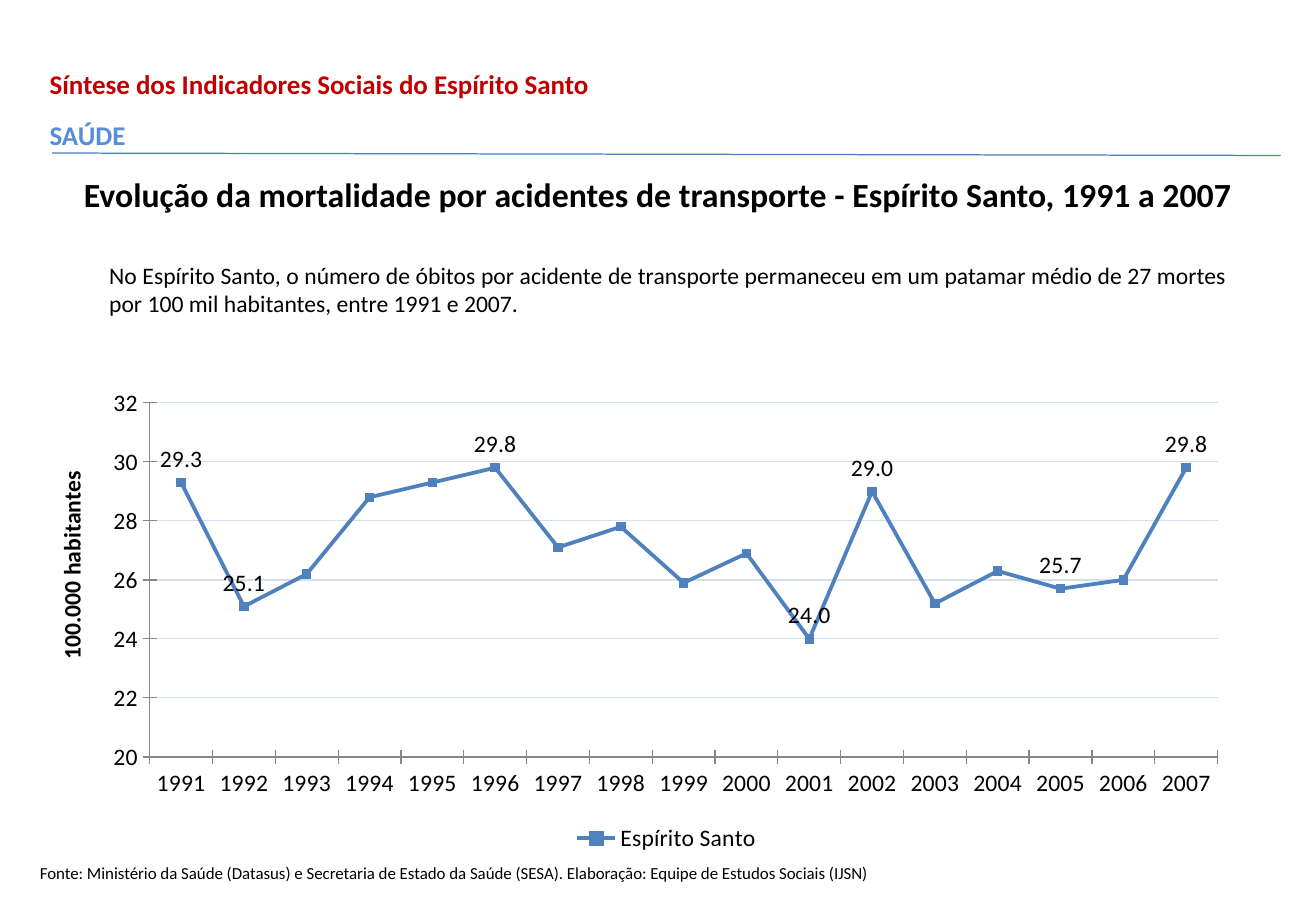
from lxml import etree
from pptx import Presentation
from pptx.chart.data import CategoryChartData
from pptx.dml.color import RGBColor
from pptx.enum.chart import XL_CHART_TYPE, XL_LABEL_POSITION, XL_LEGEND_POSITION
from pptx.enum.chart import XL_MARKER_STYLE, XL_TICK_MARK
from pptx.enum.shapes import MSO_CONNECTOR
from pptx.enum.text import MSO_ANCHOR, PP_ALIGN
from pptx.oxml import parse_xml
from pptx.oxml.ns import nsdecls, qn
from pptx.util import Inches, Pt

COLORS = {
    "red": "C00000", "section": "558ED5", "black": "000000", "rule": "4B7EBC",
    "series": "4F81BD", "grid": "D3DFEE", "axis": "868686",
}
FONT = "Calibri"


def color(name):
    return RGBColor.from_string(COLORS[name])


def add_text(box, lines, size, bold=False, align=PP_ALIGN.LEFT):
    """Add a text box; lines holds (text, color name) pairs."""
    frame = slide.shapes.add_textbox(*map(Inches, box)).text_frame
    frame.word_wrap = True
    for i, (text, color_name) in enumerate(lines):
        paragraph = frame.paragraphs[0] if i == 0 else frame.add_paragraph()
        paragraph.text = text
        paragraph.alignment = align
        font = paragraph.runs[0].font
        font.name, font.size, font.bold = FONT, Pt(size), bold
        font.color.rgb = color(color_name)
    return frame


prs = Presentation()
prs.slide_width, prs.slide_height = Inches(10.83), Inches(7.5)
slide = prs.slides.add_slide(prs.slide_layouts[6])

# Header and rule
header = add_text((0.31, 0.51, 10.52, 1.12),
                  [("Síntese dos Indicadores Sociais do Espírito Santo", "red"),
                   ("SAÚDE", "section")], 16, bold=True)
header.paragraphs[1].space_before = Pt(11)

rule = slide.shapes.add_connector(MSO_CONNECTOR.STRAIGHT, Inches(0.43), Inches(1.26),
                                  Inches(10.54), Inches(1.28))
rule.line.color.rgb = color("rule")
rule.line.width = Pt(0.75)
etree.SubElement(rule._element.spPr, qn("a:effectLst"))

# Title, source and commentary
add_text((0, 1.38, 10.83, 0.43),
         [("Evolução da mortalidade por acidentes de transporte - Espírito Santo, 1991 a 2007",
           "black")], 20, bold=True, align=PP_ALIGN.CENTER)
source = add_text((0.23, 7.05, 8.04, 0.27),
                  [("Fonte: Ministério da Saúde (Datasus) e Secretaria de Estado da Saúde (SESA). "
                    "Elaboração: Equipe de Estudos Sociais (IJSN)", "black")], 10)
source.vertical_anchor = MSO_ANCHOR.MIDDLE
add_text((0.8, 2.1, 9.4, 0.57),
         [("No Espírito Santo, o número de óbitos por acidente de transporte permaneceu em um "
           "patamar médio de 27 mortes por 100 mil habitantes, entre 1991 e 2007.", "black")],
         14, align=PP_ALIGN.JUSTIFY)

# Mortality chart
years = range(1991, 2008)
rates = [29.3, 25.1, 26.2, 28.8, 29.3, 29.8, 27.1, 27.8, 25.9,
         26.9, 24, 29, 25.2, 26.3, 25.7, 26, 29.8]
labelled_years = {1991, 1992, 1996, 2001, 2002, 2005, 2007}

data = CategoryChartData(number_format="0.0")
data.categories = [str(year) for year in years]
data.add_series("Espírito Santo", rates)
chart = slide.shapes.add_chart(XL_CHART_TYPE.LINE_MARKERS, Inches(0.76), Inches(3.12),
                               Inches(9.45), Inches(3.94), data).chart
chart.font.name, chart.font.size = FONT, Pt(14)
chart.font.color.rgb = color("black")
chart.has_title = False
chart.has_legend = True
chart.legend.position = XL_LEGEND_POSITION.BOTTOM
chart.legend.include_in_layout = False

# Axes
rate_axis = chart.value_axis
rate_axis.minimum_scale, rate_axis.maximum_scale, rate_axis.major_unit = 20, 32, 2
rate_axis.tick_labels.number_format = "0"
rate_axis.tick_labels.number_format_is_linked = False
rate_axis.has_major_gridlines = True
rate_axis.major_gridlines.format.line.color.rgb = color("grid")
rate_axis.major_gridlines.format.line.width = Pt(0.75)
for axis in (chart.category_axis, rate_axis):
    axis.major_tick_mark = XL_TICK_MARK.CROSS
    axis.format.line.color.rgb = color("axis")
    axis.format.line.width = Pt(0.75)

# Line, markers and labels
plot = chart.plots[0]
plot.vary_by_categories = False
mortality = plot.series[0]
mortality.smooth = False
mortality.format.line.color.rgb = color("series")
mortality.format.line.width = Pt(2.25)
mortality.marker.style = XL_MARKER_STYLE.SQUARE
mortality.marker.size = 5
mortality.marker.format.fill.solid()
mortality.marker.format.fill.fore_color.rgb = color("series")
mortality.marker.format.line.color.rgb = color("series")

labels = mortality.data_labels
labels.show_value = True
labels.position = XL_LABEL_POSITION.ABOVE
labels.number_format = "#,##0.0"
labels.number_format_is_linked = False
hidden = [i for i, year in enumerate(years) if year not in labelled_years]
for place, i in enumerate(hidden):
    labels._element.insert(place, parse_xml(
        f'<c:dLbl {nsdecls("c")}><c:idx val="{i}"/><c:delete val="1"/></c:dLbl>'))

# Plot area position, as fractions of the chart
plot_area = chart._chartSpace.chart.plotArea
for old_layout in plot_area.findall(qn("c:layout")):
    plot_area.remove(old_layout)
layout = etree.Element(qn("c:layout"))
manual = etree.SubElement(layout, qn("c:manualLayout"))
for tag, value in (("layoutTarget", "inner"), ("xMode", "edge"), ("yMode", "edge"),
                   ("x", "0.05"), ("y", "0.05"), ("w", "0.93"), ("h", "0.74")):
    etree.SubElement(manual, qn(f"c:{tag}")).set("val", value)
plot_area.insert(0, layout)

# Rotated axis caption
caption = add_text((0.42, 3.21, 0.44, 2.89), [("100.000 habitantes", "black")],
                   14, bold=True, align=PP_ALIGN.CENTER)
caption._txBody.bodyPr.set("vert", "vert270")

prs.save("out.pptx")
